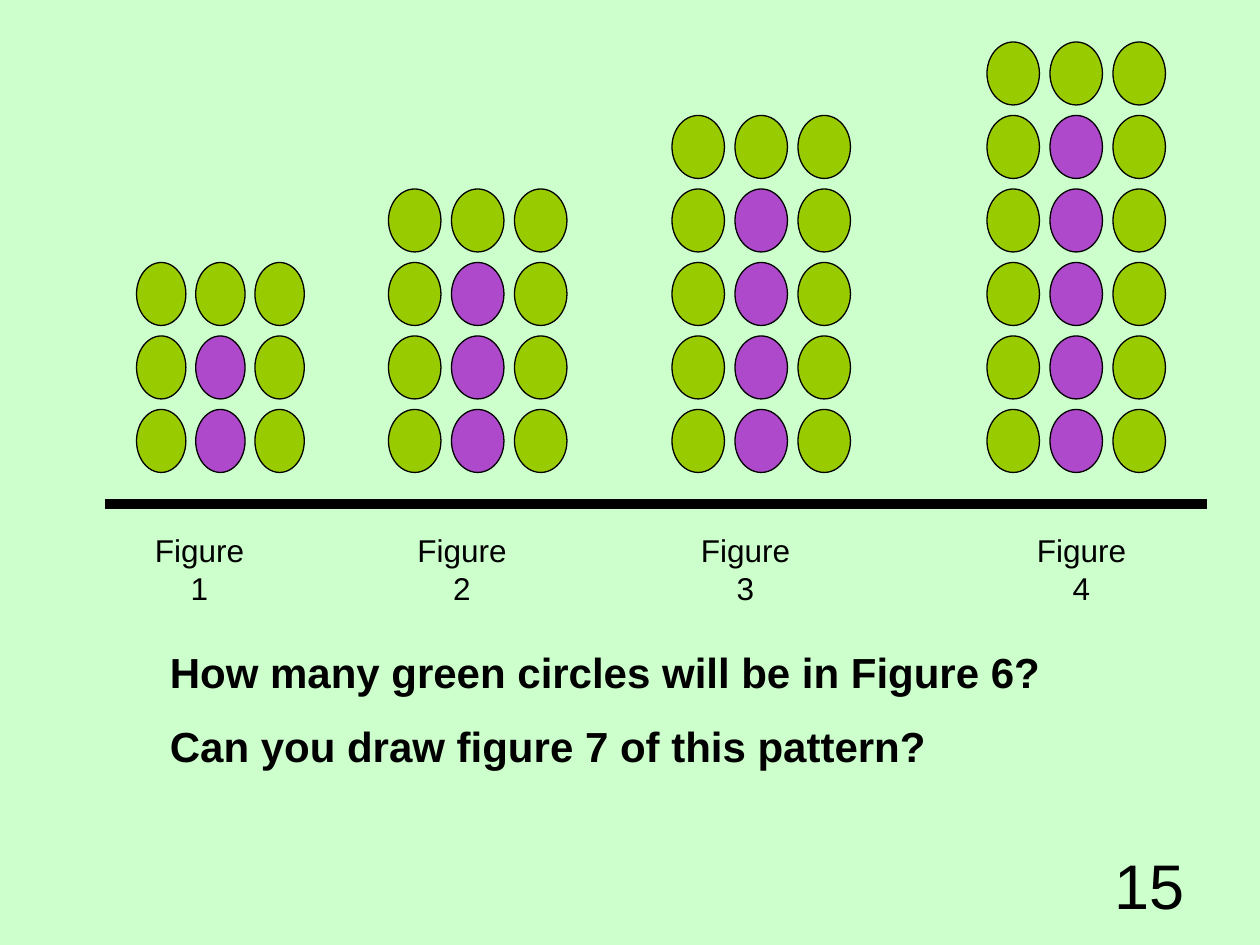
import pptx
import pptx.dml.color
import pptx.enum.shapes
import pptx.enum.text
import pptx.oxml
import pptx.oxml.ns
import pptx.util

COLORS = {
    "background": "CCFFCC",
    "green": "99CC00",
    "purple": "AF49CB",
    "black": "000000",
}
FONT = "Arial"

# The slide is a grid of 120 columns by 90 rows, twelve to the inch.
COLUMNS, ROWS = 120, 90
CIRCLE_WIDTH, CIRCLE_HEIGHT = 5, 6
COLUMN_STEP, ROW_STEP = 6, 7
BOTTOM_ROW = 39

# Left column of the circles, left column of the label, horizontal scale
FIGURES = [(13, 13, 0.94), (37, 38, 1), (64, 65, 1), (94, 97, 1)]


def grid(count):
    return pptx.util.Inches(count / 12)


def color(name):
    return pptx.dml.color.RGBColor.from_string(COLORS[name])


def add_circle(group, left, top, width, fill):
    circle = group.shapes.add_shape(
        pptx.enum.shapes.MSO_SHAPE.OVAL,
        grid(left), grid(top), grid(width), grid(CIRCLE_HEIGHT))
    circle.shadow.inherit = False
    circle.fill.solid()
    circle.fill.fore_color.rgb = color(fill)
    circle.line.color.rgb = color("black")
    circle.line.width = pptx.util.Pt(0.75)


def add_figure(slide, number, left, scale):
    """Stack number + 2 rows of three circles: a green arch around purple."""
    group = slide.shapes.add_group_shape()
    top_row = number + 1
    for row in range(top_row + 1):
        for column in range(3):
            inside = column == 1 and row < top_row
            add_circle(group,
                       left + column * COLUMN_STEP * scale,
                       BOTTOM_ROW - row * ROW_STEP,
                       CIRCLE_WIDTH * scale,
                       "purple" if inside else "green")


def add_text(slide, lines, left, top, width, height, size,
             alignment="LEFT", bold=False, wrap=True, gap=0):
    box = slide.shapes.add_textbox(
        grid(left), grid(top), grid(width), grid(height))
    frame = box.text_frame
    frame.word_wrap = wrap
    for index, line in enumerate(lines):
        paragraph = frame.add_paragraph() if index else frame.paragraphs[0]
        paragraph.alignment = pptx.enum.text.PP_ALIGN[alignment]
        if index:
            paragraph.space_before = pptx.util.Pt(gap)
        run = paragraph.add_run()
        run.text = line
        run.font.name = FONT
        run.font.size = pptx.util.Pt(size)
        run.font.bold = bold
        run.font.color.rgb = color("black")


def add_baseline(slide, left, right, row):
    line = slide.shapes.add_connector(
        pptx.enum.shapes.MSO_CONNECTOR.STRAIGHT,
        grid(left), grid(row), grid(right), grid(row))
    line.line.color.rgb = color("black")
    line.line.width = pptx.util.Pt(6)
    properties = line._element.spPr
    properties.append(pptx.oxml.parse_xml(
        "<a:effectLst %s/>" % pptx.oxml.ns.nsdecls("a")))


def main():
    presentation = pptx.Presentation()
    presentation.slide_width = grid(COLUMNS)
    presentation.slide_height = grid(ROWS)
    slide = presentation.slides.add_slide(
        presentation.slide_layouts.get_by_name("Blank"))
    slide.background.fill.solid()
    slide.background.fill.fore_color.rgb = color("background")

    for number, (left, label_left, scale) in enumerate(FIGURES, start=1):
        add_figure(slide, number, left, scale)
        add_text(slide, [f"Figure {number}"], label_left, 50, 12, 5,
                 size=18, alignment="CENTER", wrap=False)
    add_baseline(slide, 10, 115, 48)
    add_text(slide,
             ["How many green circles will be in Figure 6?",
              "Can you draw figure 7 of this pattern?"],
             15, 61, 90, 13.2, size=24, bold=True, gap=13.5)
    add_text(slide, ["15"], 86, 80, 28, 6.25, size=36, alignment="RIGHT")

    presentation.save("out.pptx")


if __name__ == "__main__":
    main()
